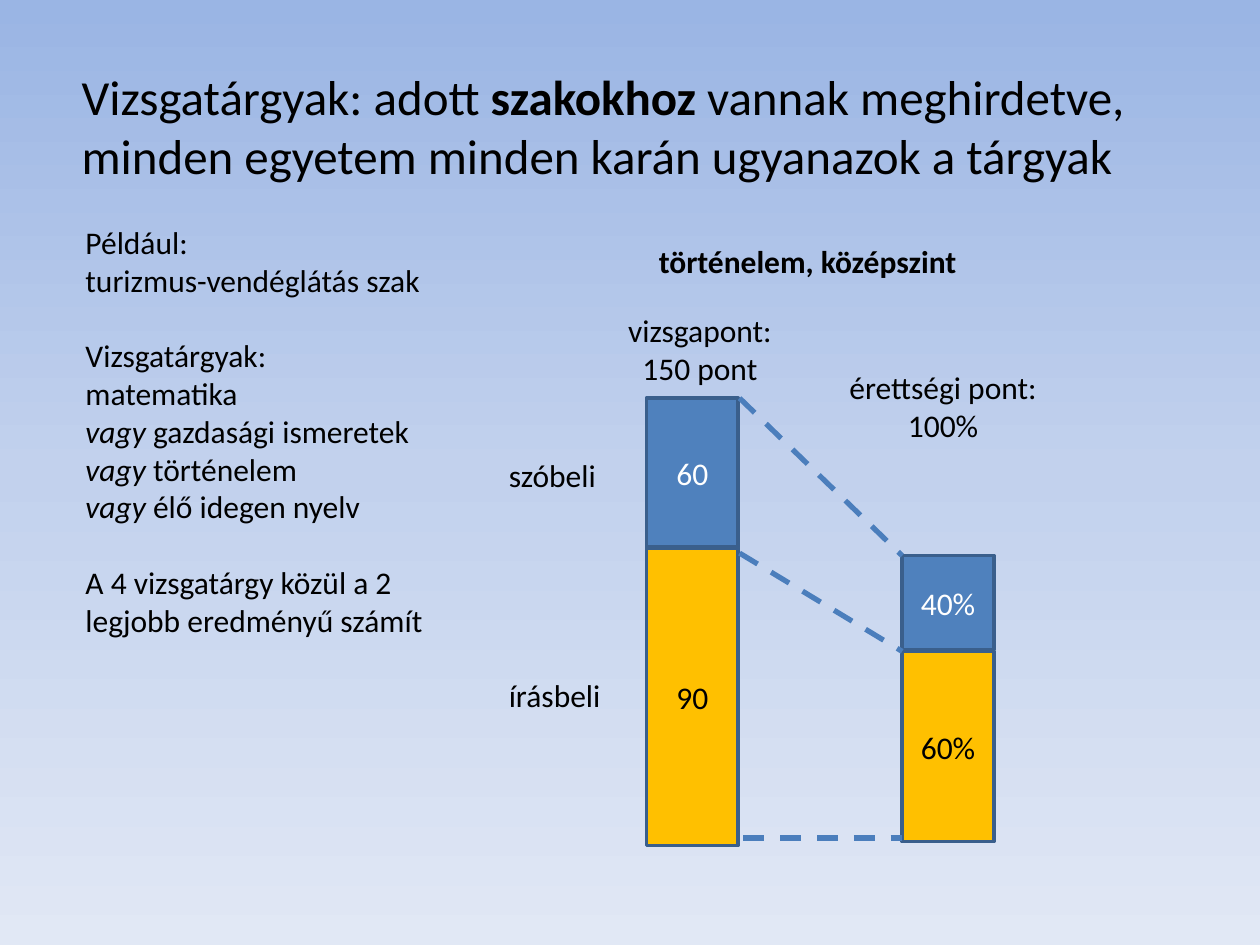
from copy import deepcopy

from pptx import Presentation, util as u
from pptx.dml.color import RGBColor
from pptx.enum import dml, shapes, text
from pptx.oxml.ns import qn

BLACK = RGBColor(0x00, 0x00, 0x00)
WHITE = RGBColor(0xFF, 0xFF, 0xFF)
BLUE = RGBColor(0x4F, 0x81, 0xBD)
GOLD = RGBColor(0xFF, 0xC0, 0x00)
EDGE = RGBColor(0x3A, 0x5F, 0x8C)
DASH = RGBColor(0x4B, 0x7E, 0xBC)
SKY = [(0, RGBColor(0x9A, 0xB5, 0xE4)),
       (0.5, RGBColor(0xC2, 0xD1, 0xED)),
       (1, RGBColor(0xE1, 0xE8, 0xF5))]
MID = text.PP_ALIGN.CENTER


class Deck:
    font = "Calibri"
    size = 18

    def __init__(self):
        self.prs = Presentation()
        self.prs.slide_width = u.Inches(10)
        self.prs.slide_height = u.Inches(7.5)
        self.slide = self.prs.slides.add_slide(self.prs.slide_layouts[6])

    def sky(self, stops):
        fill = self.slide.background.fill
        fill.gradient()
        fill.gradient_angle = 270
        group = self.slide._element.find(".//" + qn("a:gsLst"))
        while len(group) < len(stops):
            group.append(deepcopy(group[-1]))
        for stop, (pos, color) in zip(fill.gradient_stops, stops):
            stop.position = pos
            stop.color.rgb = color

    def style(self, para, color=BLACK, size=None, bold=None):
        for run in para.runs:
            run.font.name = self.font
            run.font.size = u.Pt(size or self.size)
            run.font.color.rgb = color
            if bold:
                run.font.bold = True

    def label(self, x, y, w, h, lines, size=None, bold=None, align=None, wrap=False):
        """Each line is a string or a list of (text, mark) with mark "", "b" or "i"."""
        box = self.slide.shapes.add_textbox(*map(u.Inches, (x, y, w, h)))
        frame = box.text_frame
        frame.word_wrap = wrap
        frame.auto_size = text.MSO_AUTO_SIZE.SHAPE_TO_FIT_TEXT
        for i, line in enumerate(lines):
            para = frame.add_paragraph() if i else frame.paragraphs[0]
            for part, mark in [(line, "")] if isinstance(line, str) else line:
                run = para.add_run()
                run.text = part
                run.font.bold = mark == "b"
                run.font.italic = mark == "i"
            para.alignment = align
            self.style(para, size=size, bold=bold)
        return frame

    def bar(self, x, y, h, value, fill, color):
        box = self.slide.shapes.add_shape(
            shapes.MSO_SHAPE.RECTANGLE, *map(u.Inches, (x, y, 0.73, h)))
        box.shadow.inherit = False
        box.fill.solid()
        box.fill.fore_color.rgb = fill
        box.line.color.rgb = EDGE
        box.line.width = u.Pt(2)
        frame = box.text_frame
        frame.text = value
        frame.vertical_anchor = text.MSO_ANCHOR.MIDDLE
        frame.paragraphs[0].alignment = MID
        self.style(frame.paragraphs[0], color)

    def dash(self, *ends):
        line = self.slide.shapes.add_connector(
            shapes.MSO_CONNECTOR.STRAIGHT, *map(u.Inches, ends))
        line.line.color.rgb = DASH
        line.line.width = u.Pt(3)
        line.line.dash_style = dml.MSO_LINE.DASH
        props = line._element.spPr
        props.append(props.makeelement(qn("a:effectLst"), {}))


def main():
    deck = Deck()
    deck.sky(SKY)

    # Title
    deck.label(0.55, 0.48, 8.57, 1.04, [
        [("Vizsgatárgyak: adott ", ""), ("szakokhoz", "b"),
         (" vannak meghirdetve,", "")],
        "minden egyetem minden karán ugyanazok a tárgyak"], size=28)

    # Example, with a gap of one line before each new part
    options = ["gazdasági ismeretek", "történelem", "élő idegen nyelv"]
    example = deck.label(0.58, 1.72, 3.11, 3.43, [
        "Például:", "turizmus-vendéglátás szak",
        "Vizsgatárgyak:", "matematika",
        *[[("vagy", "i"), (" " + name, "")] for name in options],
        "A 4 vizsgatárgy közül a 2 legjobb eredményű számít"], wrap=True)
    for i in (2, 7):
        example.paragraphs[i].space_before = u.Pt(21.6)

    # Stacked bars: oral part above written part
    for x, top, oral, split, written, values in [
            (5.13, 3.16, 1.18, 4.35, 2.36, ("60", "90")),
            (7.16, 4.41, 0.75, 5.17, 1.51, ("40%", "60%"))]:
        deck.bar(x, top, oral, values[0], BLUE, WHITE)
        deck.bar(x, split, written, values[1], GOLD, BLACK)

    # Bar labels
    deck.label(4.88, 2.42, 1.35, 0.71, ["vizsgapont:", "150 pont"], align=MID)
    deck.label(6.51, 2.87, 1.95, 0.71, ["érettségi pont:", "100%"],
               align=MID, wrap=True)
    deck.label(5.13, 1.87, 2.58, 0.4, ["történelem, középszint"], bold=True)
    deck.label(3.94, 3.57, 0.9, 0.4, ["szóbeli"])
    deck.label(3.94, 5.32, 0.94, 0.4, ["írásbeli"])

    # Dashed links between the bars
    deck.dash(5.87, 3.16, 7.16, 4.41)
    deck.dash(5.87, 4.39, 7.16, 5.17)
    deck.dash(5.9, 6.65, 7.16, 6.65)

    deck.prs.save("out.pptx")


if __name__ == "__main__":
    main()
